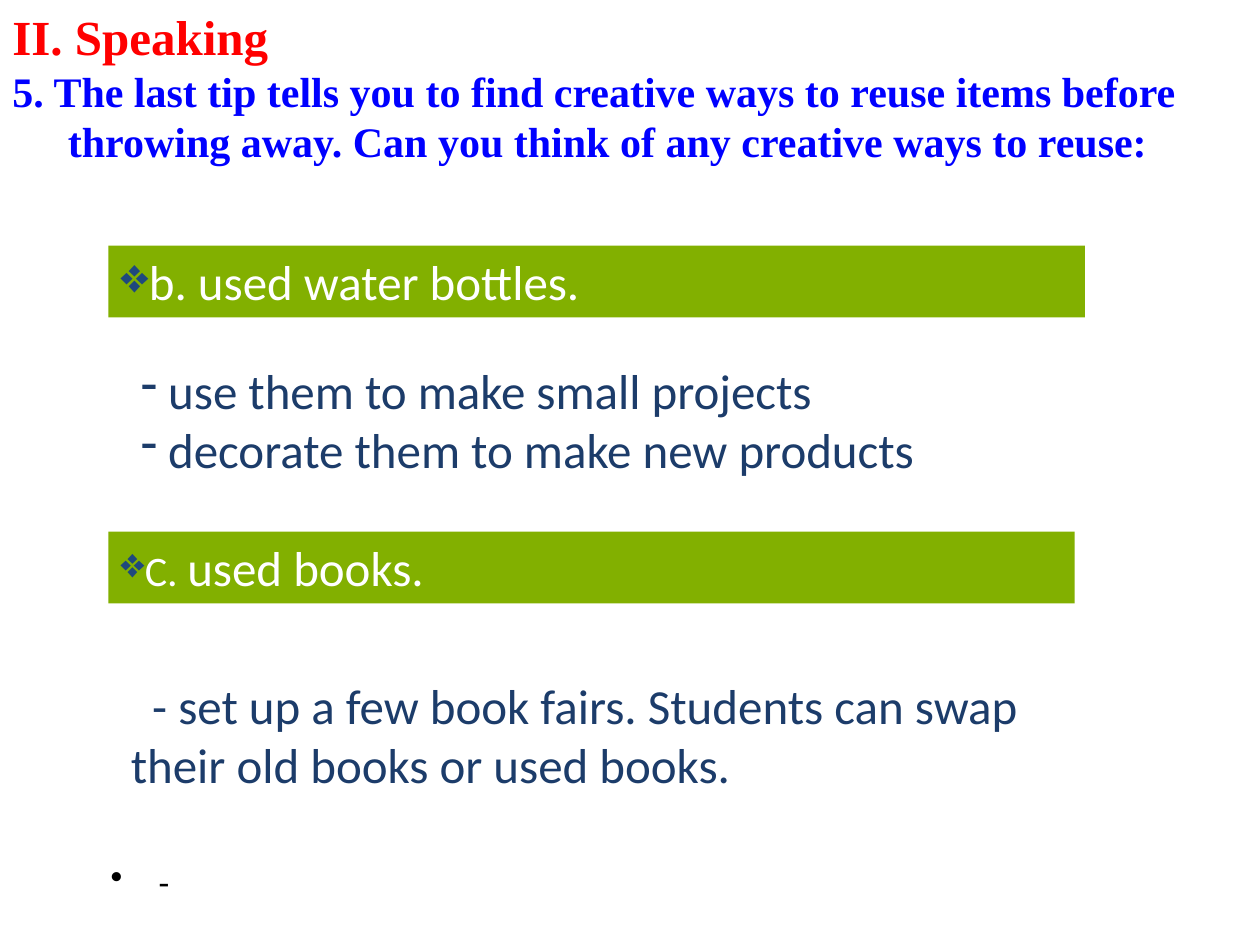
from lxml import etree
from pptx import Presentation
from pptx.dml.color import RGBColor
from pptx.enum import shapes, text
from pptx.oxml import ns
from pptx.util import Inches, Pt

GREEN, NAVY, BULLET_BLUE = "82B000", "1C3C6A", "1F497D"
WHITE, BLACK, RED, BLUE = "FFFFFF", "000000", "FF0000", "0000FF"


def color(value):
    return RGBColor.from_string(value)


def set_bullet(paragraph, character, bullet_color=None):
    properties = paragraph._p.get_or_add_pPr()
    if bullet_color:
        holder = etree.SubElement(properties, ns.qn("a:buClr"))
        etree.SubElement(holder, ns.qn("a:srgbClr"), val=bullet_color)
    etree.SubElement(properties, ns.qn("a:buChar"), char=character)


def set_indent(paragraph, margin, first_line):
    properties = paragraph._p.get_or_add_pPr()
    properties.set("marL", str(Inches(margin)))
    properties.set("indent", str(Inches(first_line)))


def style_font(font, size, font_color, name="Calibri", bold=False):
    font.size = Pt(size)
    font.name = name
    font.bold = bold
    font.color.rgb = color(font_color)


def add_text(slide, box, lines):
    """Add a wrapping text box with one paragraph per line and return the paragraphs."""
    frame = slide.shapes.add_textbox(*map(Inches, box)).text_frame
    frame.word_wrap = True
    frame.text = "\n".join(lines)
    for paragraph in frame.paragraphs:
        style_font(paragraph.font, 28, NAVY)
    return frame.paragraphs


def add_heading_bar(slide, box, runs):
    """Add a green bar; runs are pairs of wording and size."""
    shape = slide.shapes.add_shape(shapes.MSO_SHAPE.RECTANGLE, *map(Inches, box))
    shape.shadow.inherit = False
    shape.fill.solid()
    shape.fill.fore_color.rgb = color(GREEN)
    shape.line.fill.background()
    frame = shape.text_frame
    frame.word_wrap = True
    frame.vertical_anchor = text.MSO_ANCHOR.TOP
    paragraph = frame.paragraphs[0]
    paragraph.alignment = text.PP_ALIGN.LEFT
    set_bullet(paragraph, "❖", BULLET_BLUE)
    for wording, size in runs:
        run = paragraph.add_run()
        run.text = wording
        style_font(run.font, size, WHITE)


def add_title(slide):
    paragraphs = add_text(slide, (0, 0, 10, 1.38), [
        "II. Speaking",
        "5. The last tip tells you to find creative ways to reuse items before "
        "throwing away. Can you think of any creative ways to reuse:",
    ])
    for paragraph, size, font_color in zip(paragraphs, (28, 24), (RED, BLUE)):
        style_font(paragraph.font, size, font_color, "Times New Roman", True)
        set_indent(paragraph, 0.44, -0.44)


def main():
    presentation = Presentation()
    presentation.slide_width = Inches(10)
    presentation.slide_height = Inches(7.5)
    slide = presentation.slides.add_slide(presentation.slide_layouts[6])

    footnote = add_text(slide, (0.78, 6.78, 7.71, 0.44), ["-"])[0]
    style_font(footnote.font, 20, BLACK)
    set_indent(footnote, 0.38, -0.38)
    set_bullet(footnote, "•")

    add_heading_bar(slide, (0.86, 1.95, 7.75, 0.57), [("b. used water bottles.", 28)])
    bottle_ideas = add_text(slide, (1.02, 2.81, 6.8, 1.75), [
        " use them to make small projects",
        " decorate them to make new products",
    ])
    for paragraph in bottle_ideas:
        set_bullet(paragraph, "-")

    add_heading_bar(slide, (0.86, 4.22, 7.67, 0.57), [("C. ", 24), ("used books.", 28)])
    book_idea = add_text(slide, (0.94, 5.31, 7.67, 1.51), [
        "- set up a few book fairs. Students can swap their old books or used books.",
    ])[0]
    set_indent(book_idea, 0, 0.17)

    add_title(slide)
    presentation.save("out.pptx")


if __name__ == "__main__":
    main()
